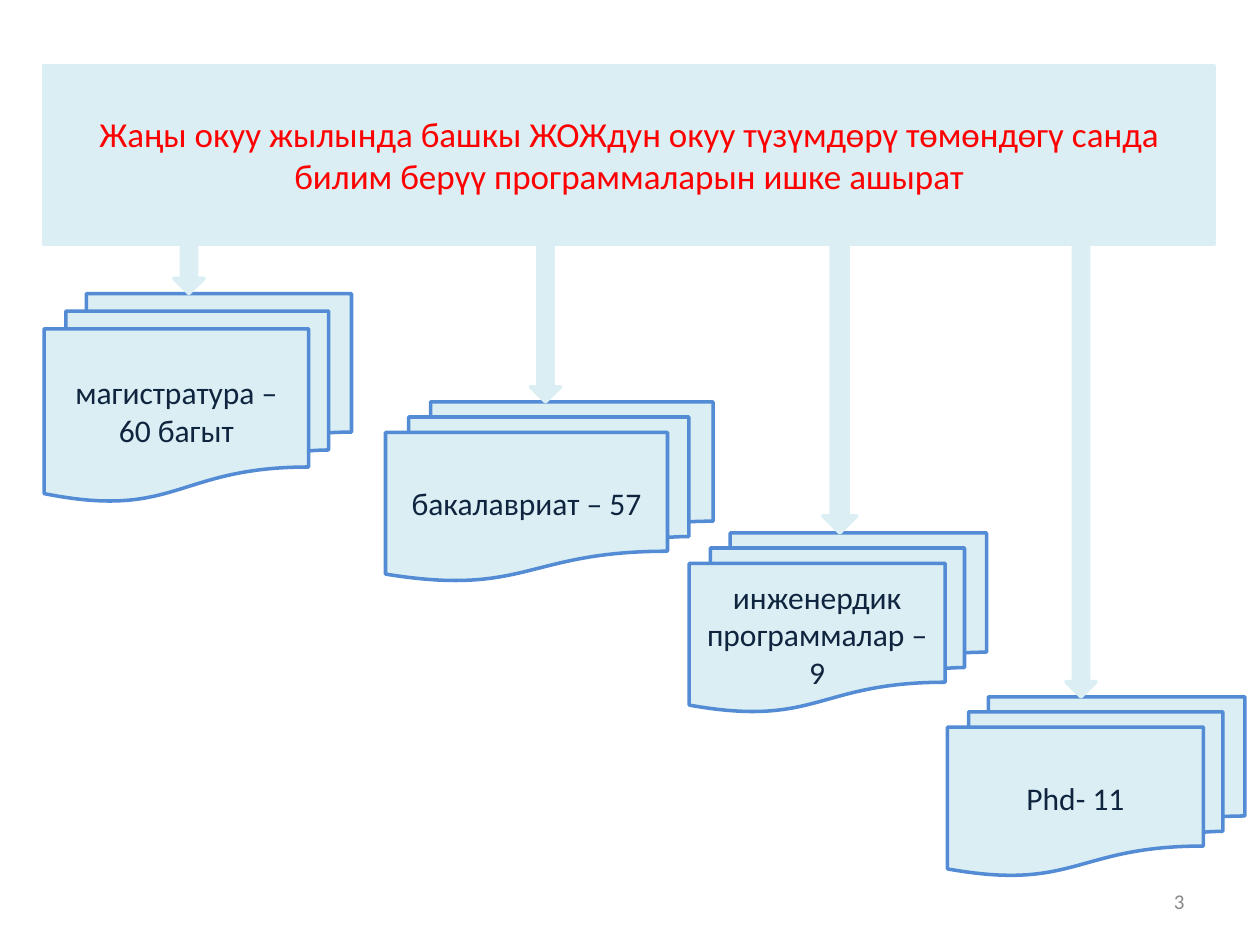
from lxml.etree import SubElement
from pptx import Presentation
from pptx.dml.color import RGBColor
from pptx.enum.shapes import MSO_SHAPE
from pptx.enum.text import MSO_ANCHOR, PP_ALIGN
from pptx.oxml.ns import qn
from pptx.util import Inches, Pt

COLUMNS, ROWS = 100, 75
BANNER = (3.5, 5.2, 92.9, 14.2)
PROGRAMS = [
    {"text": "магистратура – 60 багыт", "box": (3.5, 23.3, 24.4, 16.5),
     "arrow": (13.8, 18.6, 2.4)},
    {"text": "бакалавриат – 57", "box": (30.6, 31.9, 26, 14.2),
     "arrow": (42.1, 19.4, 2.4)},
    {"text": "инженердик программалар – 9", "box": (54.7, 42.3, 23.6, 14.2),
     "arrow": (65.3, 19.5, 2.7)},
    {"text": "Phd- 11", "box": (75.2, 55.3, 23.6, 14.2),
     "arrow": (84.6, 19.4, 2.4)},
]


def color(value):
    return RGBColor.from_string(value)


def write(shape, text, size=18, font="Calibri", ink="0F243E", align=PP_ALIGN.CENTER):
    frame = shape.text_frame
    frame.word_wrap = True
    frame.vertical_anchor = MSO_ANCHOR.MIDDLE
    paragraph = frame.paragraphs[0]
    paragraph.alignment = align
    run = paragraph.add_run()
    run.text = text
    run.font.size = Pt(size)
    run.font.name = font
    run.font.color.rgb = color(ink)


class SlideBuilder:
    fill = "DAEEF3"
    outline = "538CD5"
    heading_ink = "FF0000"
    number_ink = "888888"

    def __init__(self, presentation):
        self.cell_width = presentation.slide_width / COLUMNS
        self.cell_height = presentation.slide_height / ROWS
        self.slide = presentation.slides.add_slide(presentation.slide_layouts[5])

    def place(self, left, top, width, height):
        return (round(left * self.cell_width), round(top * self.cell_height),
                round(width * self.cell_width), round(height * self.cell_height))

    def paint(self, shape, line):
        shape.fill.solid()
        shape.fill.fore_color.rgb = color(self.fill)
        shape.line.color.rgb = color(line)
        shape.line.width = Pt(2)

    def shape(self, kind, box, line):
        shape = self.slide.shapes.add_shape(kind, *self.place(*box))
        shape.shadow.inherit = False
        self.paint(shape, line)
        return shape

    def banner(self, text, box):
        title = self.slide.shapes.title
        title.left, title.top, title.width, title.height = self.place(*box)
        geometry = SubElement(title._element.spPr, qn("a:prstGeom"), prst="roundRect")
        SubElement(geometry, qn("a:avLst"))
        self.paint(title, self.fill)
        write(title, text, size=20, ink=self.heading_ink)

    def documents(self, text, box):
        write(self.shape(MSO_SHAPE.FLOWCHART_MULTIDOCUMENT, box, self.outline), text)

    def arrow(self, left, top, width, tip):
        self.shape(MSO_SHAPE.DOWN_ARROW, (left, top, width, tip - top), self.fill)

    def page_number(self, text, box):
        label = self.slide.shapes.add_textbox(*self.place(*box))
        write(label, text, size=12, ink=self.number_ink, align=PP_ALIGN.RIGHT)


def main():
    presentation = Presentation()
    presentation.slide_width = Inches(10)
    presentation.slide_height = Inches(7.5)
    builder = SlideBuilder(presentation)
    builder.banner("Жаңы окуу жылында башкы ЖОЖдун окуу түзүмдөрү төмөндөгү санда "
                   "билим берүү программаларын ишке ашырат", BANNER)
    for program in PROGRAMS:
        builder.documents(program["text"], program["box"])
    for program in PROGRAMS:
        builder.arrow(*program["arrow"], tip=program["box"][1])
    builder.page_number("3", (71.7, 69.5, 23.3, 4))
    presentation.save("out.pptx")


if __name__ == "__main__":
    main()
